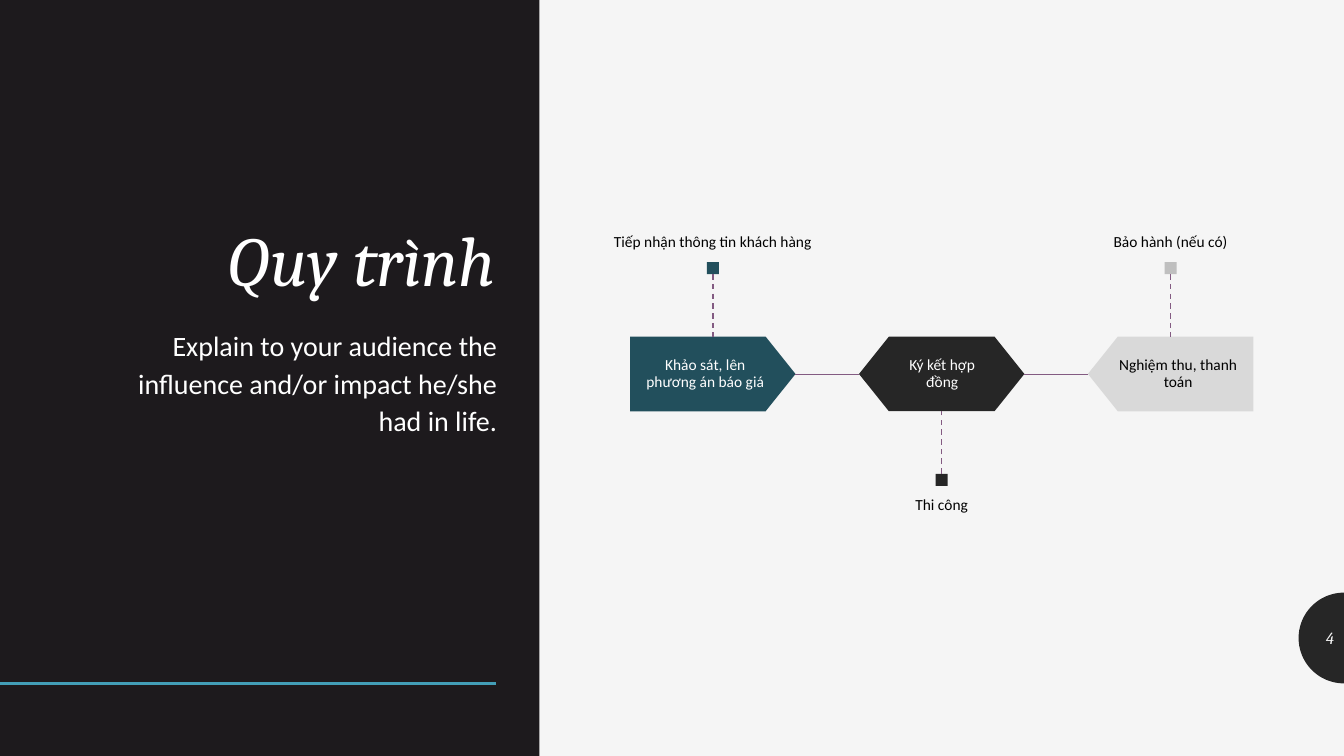
import math

import pptx
import pptx.dml.color
import pptx.enum.dml
import pptx.enum.shapes
import pptx.enum.text
import pptx.oxml.ns
import pptx.util

Inches = pptx.util.Inches
Shape = pptx.enum.shapes.MSO_SHAPE
Anchor = pptx.enum.text.MSO_ANCHOR
Align = pptx.enum.text.PP_ALIGN

# Content
TITLE = "Quy trình"
SUBTITLE = "Explain to your audience the influence and/or impact he/she had in life."
PAGE_NUMBER = "4"
STEPS = [
    dict(text="Khảo sát, lên phương án báo giá", note="Tiếp nhận thông tin khách hàng",
         preset=Shape.PENTAGON, rotation=0, fill="224F5C", marker="224F5C",
         color="FFFFFF", above=True, text_offset=0, text_width=1.49),
    dict(text="Ký kết hợp đồng", note="Thi công",
         preset=Shape.HEXAGON, rotation=0, fill="262626", marker="262626",
         color="FFFFFF", above=False, text_offset=0.24, text_width=1.17),
    dict(text="Nghiệm thu, thanh toán", note="Bảo hành (nếu có)",
         preset=Shape.PENTAGON, rotation=180, fill="D9D9D9", marker="BFBFBF",
         color="000000", above=True, text_offset=0.15, text_width=1.49),
]

# Layout in inches
SLIDE_WIDTH, SLIDE_HEIGHT = 13.33, 7.5
STEP_LEFT, STEP_TOP, STEP_WIDTH, STEP_HEIGHT = 6.25, 3.34, 1.64, 0.74
STEP_PITCH = 2.27
STEM, MARKER = 0.62, 0.12
NOTE_WIDTH, NOTE_HEIGHT = 2.28, 1.98
BADGE_RADIUS, BADGE_CENTER = 0.45, 6.33

presentation = pptx.Presentation()
presentation.slide_width = Inches(SLIDE_WIDTH)
presentation.slide_height = Inches(SLIDE_HEIGHT)
slide = presentation.slides.add_slide(presentation.slide_layouts[5])
shapes = slide.shapes


def rgb(value):
    return pptx.dml.color.RGBColor.from_string(value)


def paint(shape, color):
    shape.shadow.inherit = False
    shape.fill.solid()
    shape.fill.fore_color.rgb = rgb(color)
    shape.line.fill.background()


def add_block(preset, left, top, width, height, color):
    shape = shapes.add_shape(preset, Inches(left), Inches(top), Inches(width), Inches(height))
    paint(shape, color)
    return shape


def add_line(x1, y1, x2, y2, color, width, dashed=False):
    line = shapes.add_connector(pptx.enum.shapes.MSO_CONNECTOR.STRAIGHT,
                                Inches(x1), Inches(y1), Inches(x2), Inches(y2))
    line.line.color.rgb = rgb(color)
    line.line.width = pptx.util.Pt(width)
    if dashed:
        line.line.dash_style = pptx.enum.dml.MSO_LINE.DASH
    properties = line._element.spPr
    properties.append(properties.makeelement(pptx.oxml.ns.qn("a:effectLst"), {}))
    return line


def write(shape, text, size, font, color, align, anchor, spacing=1.0, italic=False,
          inset_x=0.1, inset_y=0.05):
    frame = shape.text_frame
    frame.text = text
    frame.word_wrap = True
    frame.auto_size = pptx.enum.text.MSO_AUTO_SIZE.NONE
    frame.vertical_anchor = anchor
    frame.margin_left = frame.margin_right = Inches(inset_x)
    frame.margin_top = frame.margin_bottom = Inches(inset_y)
    paragraph = frame.paragraphs[0]
    paragraph.alignment = align
    paragraph.line_spacing = spacing
    run_font = paragraph.runs[0].font
    run_font.size = pptx.util.Pt(size)
    run_font.name = font
    run_font.italic = italic
    run_font.color.rgb = rgb(color)


def add_text(left, top, width, height, *args, **options):
    box = shapes.add_textbox(Inches(left), Inches(top), Inches(width), Inches(height))
    write(box, *args, **options)
    return box


# Background, left panel and accent line
slide.background.fill.solid()
slide.background.fill.fore_color.rgb = rgb("F5F5F5")
panel = add_block(Shape.RECTANGLE, 0, 0, 5.35, SLIDE_HEIGHT, "1D1A1D")
add_line(0, 6.78, 4.92, 6.78, "439EB7", 2)

# Title and subtitle, with the title in front of the panel
title = shapes.title
title.left, title.top = Inches(0.83), Inches(0.61)
title.width, title.height = Inches(4.19), Inches(2.43)
write(title, TITLE, 50, "Cambria", "FFFFFF", Align.RIGHT, Anchor.BOTTOM, 0.9, True)
title._element.addprevious(panel._element)
subtitle = add_text(0.83, 3.17, 4.2, 3.12, SUBTITLE, 20, "Calibri", "FFFFFF",
                    Align.RIGHT, Anchor.TOP, 1.12)
subtitle.text_frame.paragraphs[0].space_before = pptx.util.Pt(9)

# Process steps, each with a stem, a marker and a note
middle = STEP_TOP + STEP_HEIGHT / 2
for index, step in enumerate(STEPS):
    left = STEP_LEFT + index * STEP_PITCH
    center = left + STEP_WIDTH / 2
    block = add_block(step["preset"], left, STEP_TOP, STEP_WIDTH, STEP_HEIGHT, step["fill"])
    block.adjustments[0] = 0.4
    block.rotation = step["rotation"]
    add_text(left + step["text_offset"], STEP_TOP, step["text_width"], STEP_HEIGHT,
             step["text"], 11, "Calibri", step["color"], Align.CENTER, Anchor.MIDDLE, 0.9,
             inset_x=0.09, inset_y=0.09)
    if index < len(STEPS) - 1:
        add_line(left + STEP_WIDTH, middle, left + STEP_PITCH, middle, "835B82", 0.5)

    if step["above"]:
        edge = STEP_TOP
        stem_end = edge - STEM
        marker_top = stem_end - MARKER
        note_top, note_anchor, marker_side = marker_top - NOTE_HEIGHT, Anchor.BOTTOM, 2
    else:
        edge = STEP_TOP + STEP_HEIGHT
        stem_end = marker_top = edge + STEM
        note_top, note_anchor, marker_side = marker_top + MARKER, Anchor.TOP, 0
    marker = add_block(Shape.RECTANGLE, center - MARKER / 2, marker_top, MARKER, MARKER,
                       step["marker"])
    stem = add_line(center, stem_end, center, edge, "835B82", 1, dashed=True)
    stem.begin_connect(marker, marker_side)
    add_text(center - NOTE_WIDTH / 2, note_top, NOTE_WIDTH, NOTE_HEIGHT,
             step["note"], 11, "Calibri", "000000", Align.CENTER, note_anchor, 0.9,
             inset_x=0, inset_y=0.11)

# Half-round page number badge on the right edge
arc = [(Inches(SLIDE_WIDTH - BADGE_RADIUS * math.sin(math.radians(angle))),
        Inches(BADGE_CENTER - BADGE_RADIUS * math.cos(math.radians(angle))))
       for angle in range(0, 181, 4)]
builder = shapes.build_freeform(*arc[0])
builder.add_line_segments(arc[1:], close=True)
paint(builder.convert_to_shape(), "262626")
add_text(SLIDE_WIDTH - BADGE_RADIUS, 6.13, BADGE_RADIUS, 0.4, PAGE_NUMBER, 12, "Cambria",
         "F5F5F5", Align.RIGHT, Anchor.MIDDLE, italic=True)

presentation.save("out.pptx")
